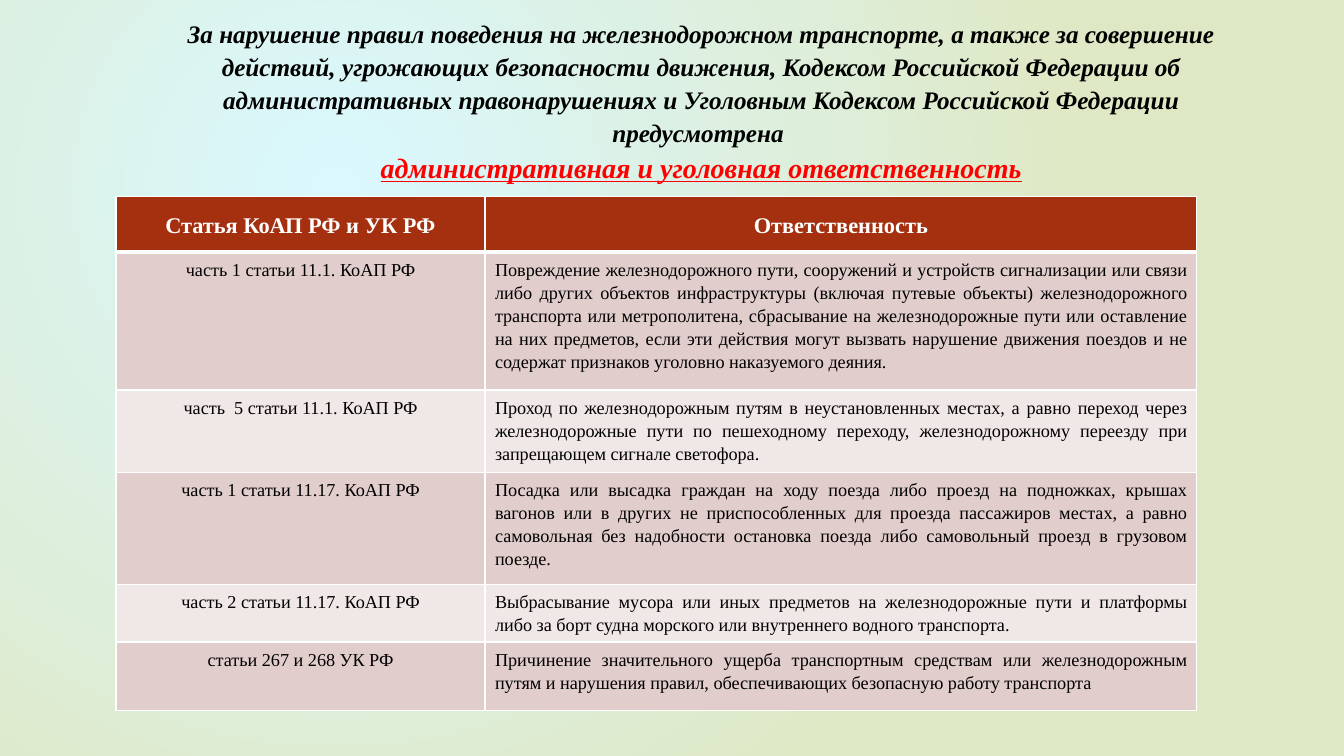
from dataclasses import dataclass

from pptx import Presentation
from pptx.dml.color import RGBColor
from pptx.enum.text import MSO_ANCHOR, PP_ALIGN
from pptx.oxml import parse_xml
from pptx.oxml.ns import nsdecls, qn
from pptx.util import Inches, Pt


@dataclass(frozen=True)
class Theme:
    """Hold the colours, font and type sizes of the slide."""
    font: str = "Times New Roman"
    glow: str = "DAF8FE"
    edge: str = "DFE8C4"
    ink: str = "000000"
    alert: str = "FF0000"
    white: str = "FFFFFF"
    head: str = "A53010"
    bands: tuple = ("E1CDCC", "F0E8E7")
    title: int = 18
    key: int = 20
    label: int = 16
    body: int = 13


THEME = Theme()
TITLE = (
    "За нарушение правил поведения на железнодорожном транспорте, а также за совершение "
    "действий, угрожающих безопасности движения, Кодексом Российской Федерации об "
    "административных правонарушениях и Уголовным Кодексом Российской Федерации предусмотрена "
)
KEY = "административная и уголовная ответственность"
COLS = (3.66, 7.06)
ROWS = (
    (0.55, "Статья КоАП РФ и УК РФ", "Ответственность"),
    (1.37, "часть 1 статьи 11.1. КоАП РФ",
     "Повреждение железнодорожного пути, сооружений и устройств сигнализации или связи либо "
     "других объектов инфраструктуры (включая путевые объекты) железнодорожного транспорта или "
     "метрополитена, сбрасывание на железнодорожные пути или оставление на них предметов, если "
     "эти действия могут вызвать нарушение движения поездов и не содержат признаков уголовно "
     "наказуемого деяния."),
    (0.82, "часть  5 статьи 11.1. КоАП РФ",
     "Проход по железнодорожным путям в неустановленных местах, а равно переход через "
     "железнодорожные пути по пешеходному переходу, железнодорожному переезду при запрещающем "
     "сигнале светофора."),
    (1.11, "часть 1 статьи 11.17. КоАП РФ",
     "Посадка или высадка граждан на ходу поезда либо проезд на подножках, крышах вагонов или в "
     "других не приспособленных для проезда пассажиров местах, а равно самовольная без "
     "надобности остановка поезда либо самовольный проезд в грузовом поезде."),
    (0.57, "часть 2 статьи 11.17. КоАП РФ",
     "Выбрасывание мусора или иных предметов на железнодорожные пути и платформы либо за борт "
     "судна морского или внутреннего водного транспорта."),
    (0.68, "статьи 267 и 268 УК РФ",
     "Причинение значительного ущерба транспортным средствам или железнодорожным путям и "
     "нарушения правил, обеспечивающих безопасную работу транспорта"),
)


def write(para, text, size, color, align=PP_ALIGN.CENTER, space=1.15, **style):
    """Add a formatted run to a paragraph."""
    para.alignment = align
    para.line_spacing = space
    run = para.add_run()
    run.text = text
    font = run.font
    font.name = THEME.font
    font.size = Pt(size)
    font.color.rgb = RGBColor.from_string(color)
    for name, value in style.items():
        setattr(font, name, value)


def paint(slide):
    """Fill the background with a round gradient."""
    stops = "".join(
        f'<a:gs pos="{pos}"><a:srgbClr val="{color}"/></a:gs>'
        for pos, color in ((0, THEME.glow), (100000, THEME.edge))
    )
    back = parse_xml(
        f'<p:bg {nsdecls("p", "a")}><p:bgPr><a:gradFill rotWithShape="1">'
        f'<a:gsLst>{stops}</a:gsLst><a:path path="circle">'
        '<a:fillToRect l="50000" t="50000" r="100000" b="100000"/></a:path>'
        '</a:gradFill><a:effectLst/></p:bgPr></p:bg>'
    )
    slide.element.find(qn("p:cSld")).insert(0, back)


def heading(slide, left, top, width, height):
    """Place the title in the given box."""
    title = slide.shapes.title
    title.left, title.top = Inches(left), Inches(top)
    title.width, title.height = Inches(width), Inches(height)
    frame = title.text_frame
    frame.word_wrap = True
    frame.vertical_anchor = MSO_ANCHOR.MIDDLE
    para = frame.paragraphs[0]
    look = dict(space=1.09, bold=True, italic=True)
    write(para, TITLE, THEME.title, THEME.ink, **look)
    para.add_line_break()
    write(para, KEY, THEME.key, THEME.alert, underline=True, **look)


def border(cell, **widths):
    """Draw white cell borders with widths in points."""
    props = cell._tc.get_or_add_tcPr()
    for spot, side in enumerate("LRTB"):
        line = parse_xml(
            f'<a:ln{side} {nsdecls("a")} w="{Pt(widths.get(side, 1))}"><a:solidFill>'
            f'<a:srgbClr val="{THEME.white}"/></a:solidFill></a:ln{side}>'
        )
        props.insert(spot, line)


def penalties(slide, left, top, width, height):
    """Place the table of articles and offences in the given box."""
    table = slide.shapes.add_table(
        len(ROWS), len(COLS), Inches(left), Inches(top), Inches(width), Inches(height)
    ).table
    for col, size in zip(table.columns, COLS):
        col.width = Inches(size)
    for row, (tall, *texts) in enumerate(ROWS):
        table.rows[row].height = Inches(tall)
        for col, text in enumerate(texts):
            cell = table.cell(row, col)
            para = cell.text_frame.paragraphs[0]
            cell.fill.solid()
            if row == 0:
                fill = THEME.head
                cell.vertical_anchor = MSO_ANCHOR.MIDDLE
                write(para, text, THEME.label, THEME.white, bold=True)
            else:
                fill = THEME.bands[(row - 1) % 2]
                align = PP_ALIGN.JUSTIFY if col else PP_ALIGN.CENTER
                write(para, text, THEME.body, THEME.ink, align, bold=False)
            cell.fill.fore_color.rgb = RGBColor.from_string(fill)
            border(cell, T=3 if row == 1 else 1, B=1 if row else 3)


def main():
    """Build and save the slide."""
    deck = Presentation()
    deck.slide_width, deck.slide_height = Inches(13.33), Inches(7.5)
    slide = deck.slides.add_slide(deck.slide_layouts[5])
    paint(slide)
    heading(slide, 1.76, 0.13, 10.39, 1.72)
    penalties(slide, 1.15, 1.95, sum(COLS), sum(row[0] for row in ROWS))
    deck.save("out.pptx")


if __name__ == "__main__":
    main()
